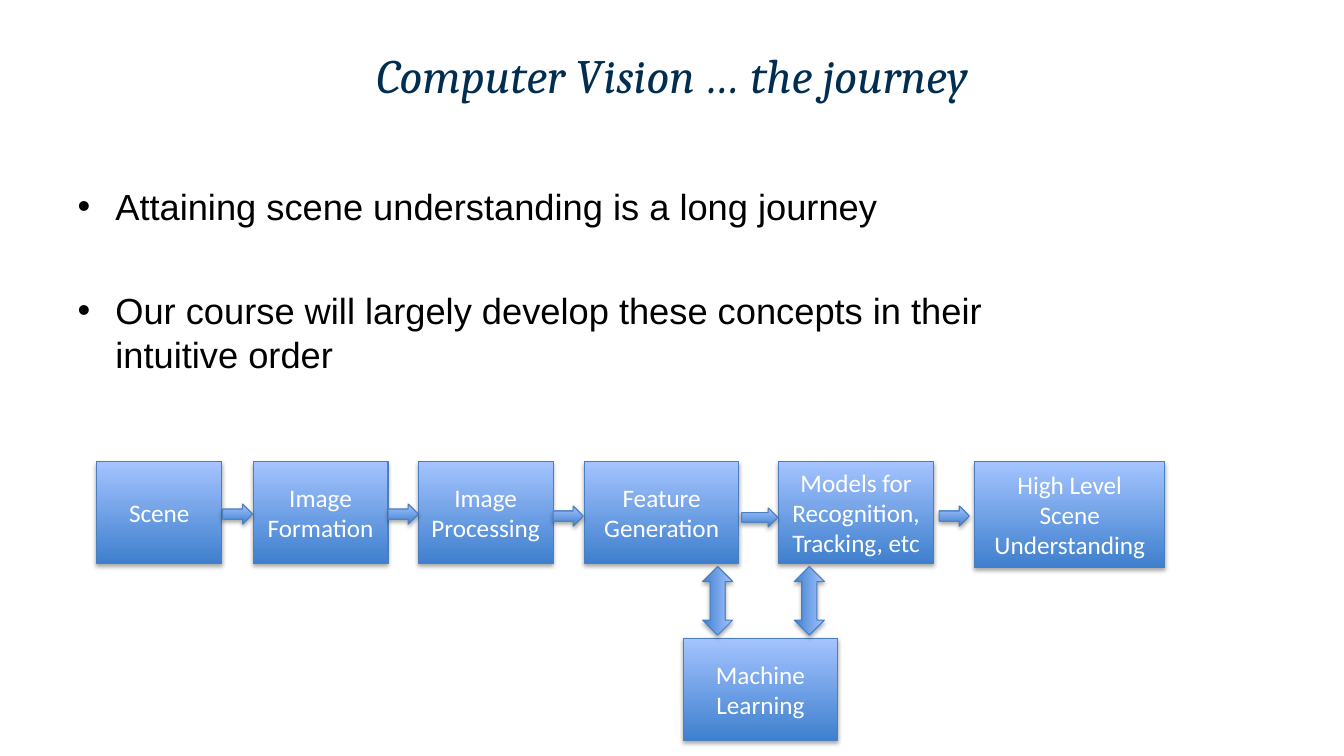
"""Build the slide on the stages of the computer vision journey."""
from lxml import etree
from pptx import Presentation
from pptx import util as u
from pptx.dml.color import RGBColor
from pptx.enum import shapes, text
from pptx.oxml import ns

NAVY = RGBColor(0x00, 0x2D, 0x50)
BLACK = RGBColor(0x00, 0x00, 0x00)
WHITE = RGBColor(0xFF, 0xFF, 0xFF)
DEEP_BLUE = RGBColor(0x3F, 0x80, 0xCE)
PALE_BLUE = RGBColor(0xA4, 0xC4, 0xFF)
EDGE_BLUE = RGBColor(0x4B, 0x7E, 0xBC)

ROW_TOP = 11.63
BOX_HEIGHT = 2.57
STAGES = [
    ("Scene", 2.44, ROW_TOP, 3.15, BOX_HEIGHT),
    ("Image Formation", 6.38, ROW_TOP, 3.4, BOX_HEIGHT),
    ("Image Processing", 10.54, ROW_TOP, 3.4, BOX_HEIGHT),
    ("Feature Generation", 14.73, ROW_TOP, 3.89, BOX_HEIGHT),
    ("Models for\nRecognition,\nTracking, etc", 19.63, ROW_TOP, 3.89, BOX_HEIGHT),
    ("Machine Learning", 17.22, 16.08, 3.89, BOX_HEIGHT),
    ("High Level Scene Understanding", 24.56, ROW_TOP, 4.8, 2.67),
]
STEP_ARROWS = [
    (5.61, 12.7, 0.76, 0.51),
    (9.78, 12.7, 0.76, 0.51),
    (13.94, 12.75, 0.76, 0.51),
    (18.69, 12.8, 0.91, 0.48),
    (23.67, 12.75, 0.76, 0.51),
]
LEARNING_ARROW_LEFTS = [17.22, 19.53]


def write_text(shape, content, *, size, font, color, italic=False, align=None, gap=0):
    """Fill a shape with formatted paragraphs, one for each line of content."""
    frame = shape.text_frame
    frame.word_wrap = True
    frame.auto_size = text.MSO_AUTO_SIZE.NONE
    frame.text = content
    for index, paragraph in enumerate(frame.paragraphs):
        paragraph.alignment = align
        paragraph.space_before = u.Pt(gap if index else 0)
        paragraph.font.size = u.Pt(size)
        paragraph.font.name = font
        paragraph.font.italic = italic
        paragraph.font.color.rgb = color


def place(shape, left, top, width, height):
    """Set the position and size of a shape in centimetres."""
    shape.left, shape.top = u.Cm(left), u.Cm(top)
    shape.width, shape.height = u.Cm(width), u.Cm(height)


def add_soft_shadow(shape):
    """Give a shape a soft dark shadow below it."""
    shape.shadow.inherit = False
    effects = shape._element.spPr.find(ns.qn("a:effectLst"))
    shadow = etree.SubElement(
        effects, ns.qn("a:outerShdw"),
        blurRad="40000", dist="23000", dir="5400000", rotWithShape="0")
    color = etree.SubElement(shadow, ns.qn("a:srgbClr"), val=str(BLACK))
    etree.SubElement(color, ns.qn("a:alpha"), val="35000")


def add_blue_shape(slide, kind, left, top, width, height):
    """Add a preset shape with the blue gradient, edge and shadow."""
    shape = slide.shapes.add_shape(
        kind, u.Cm(left), u.Cm(top), u.Cm(width), u.Cm(height))
    shape.fill.gradient()
    shape.fill.gradient_angle = 90
    for stop, color in zip(shape.fill.gradient_stops, (DEEP_BLUE, PALE_BLUE)):
        stop.color.rgb = color
    shape.line.color.rgb = EDGE_BLUE
    shape.line.width = u.Pt(0.75)
    add_soft_shadow(shape)
    return shape


def add_stage(slide, label, *box):
    """Add a labelled stage box."""
    shape = add_blue_shape(slide, shapes.MSO_SHAPE.RECTANGLE, *box)
    shape.text_frame.vertical_anchor = text.MSO_ANCHOR.MIDDLE
    write_text(shape, label, size=18, font="Calibri", color=WHITE,
               align=text.PP_ALIGN.CENTER)


def add_heading(slide):
    """Format the title placeholder."""
    title = slide.shapes.title
    place(title, 1.7, 0.97, 30.48, 1.83)
    title.text_frame.vertical_anchor = text.MSO_ANCHOR.MIDDLE
    write_text(title, "Computer Vision … the journey", size=34.2, font="Cambria",
               color=NAVY, italic=True, align=text.PP_ALIGN.CENTER)


def add_points(slide):
    """Format the body placeholder as the bullet list."""
    body = slide.placeholders[1]
    place(body, 1.7, 4.45, 24.89, 4.85)
    body.text_frame.margin_top = u.Cm(0.2)
    write_text(
        body,
        "Attaining scene understanding is a long journey\n"
        "Our course will largely develop these concepts in their intuitive order",
        size=25.9, font="Arial", color=BLACK, gap=43)


def main():
    """Build and save the slide."""
    presentation = Presentation()
    presentation.slide_width = u.Cm(33.87)
    presentation.slide_height = u.Cm(19.05)
    slide = presentation.slides.add_slide(presentation.slide_layouts[1])
    add_heading(slide)
    add_points(slide)
    for stage in STAGES:
        add_stage(slide, *stage)
    for box in STEP_ARROWS:
        add_blue_shape(slide, shapes.MSO_SHAPE.RIGHT_ARROW, *box)
    for left in LEARNING_ARROW_LEFTS:
        arrow = add_blue_shape(
            slide, shapes.MSO_SHAPE.LEFT_RIGHT_ARROW, left, 14.76, 1.73, 0.76)
        arrow.rotation = 90
    presentation.save("out.pptx")


if __name__ == "__main__":
    main()
